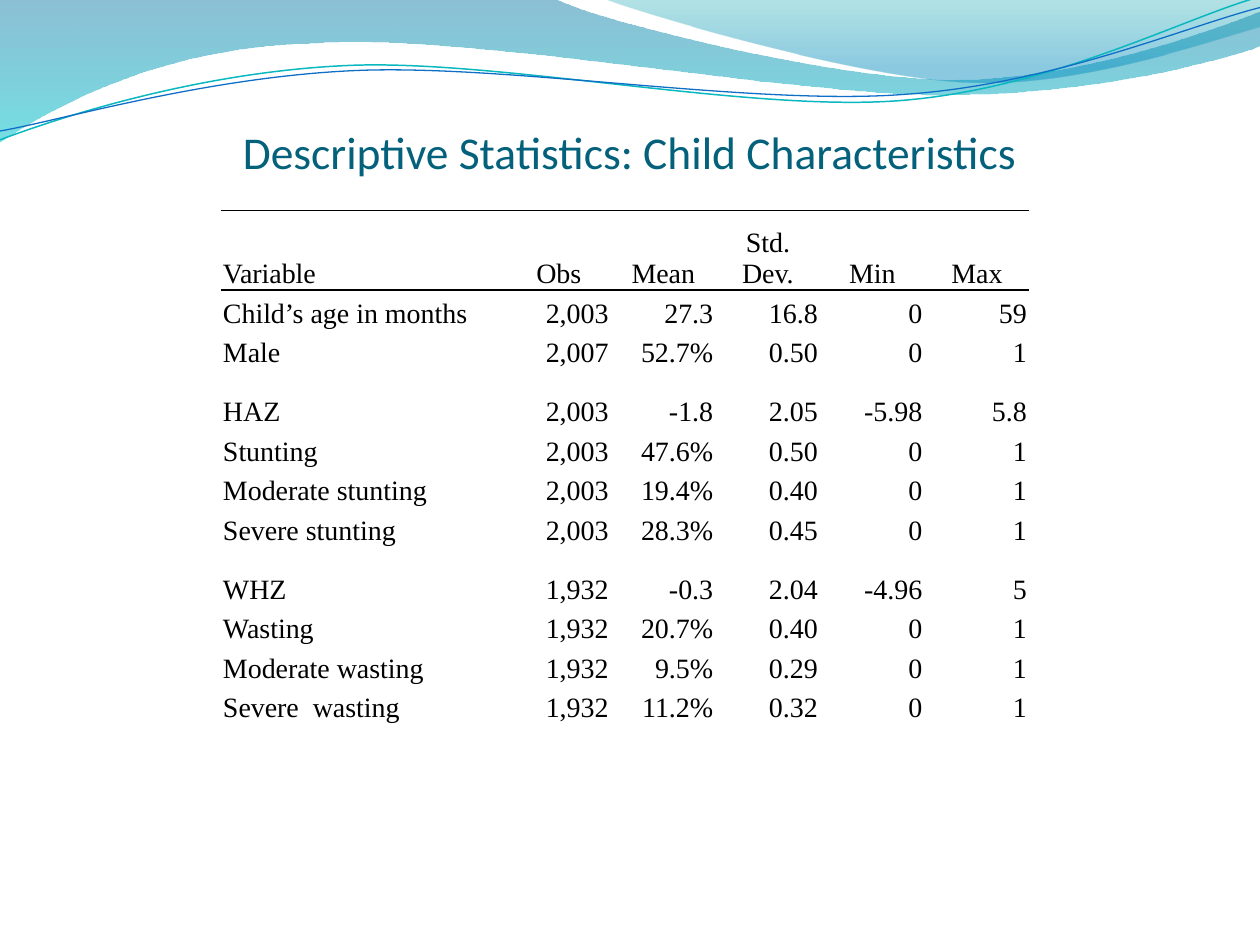
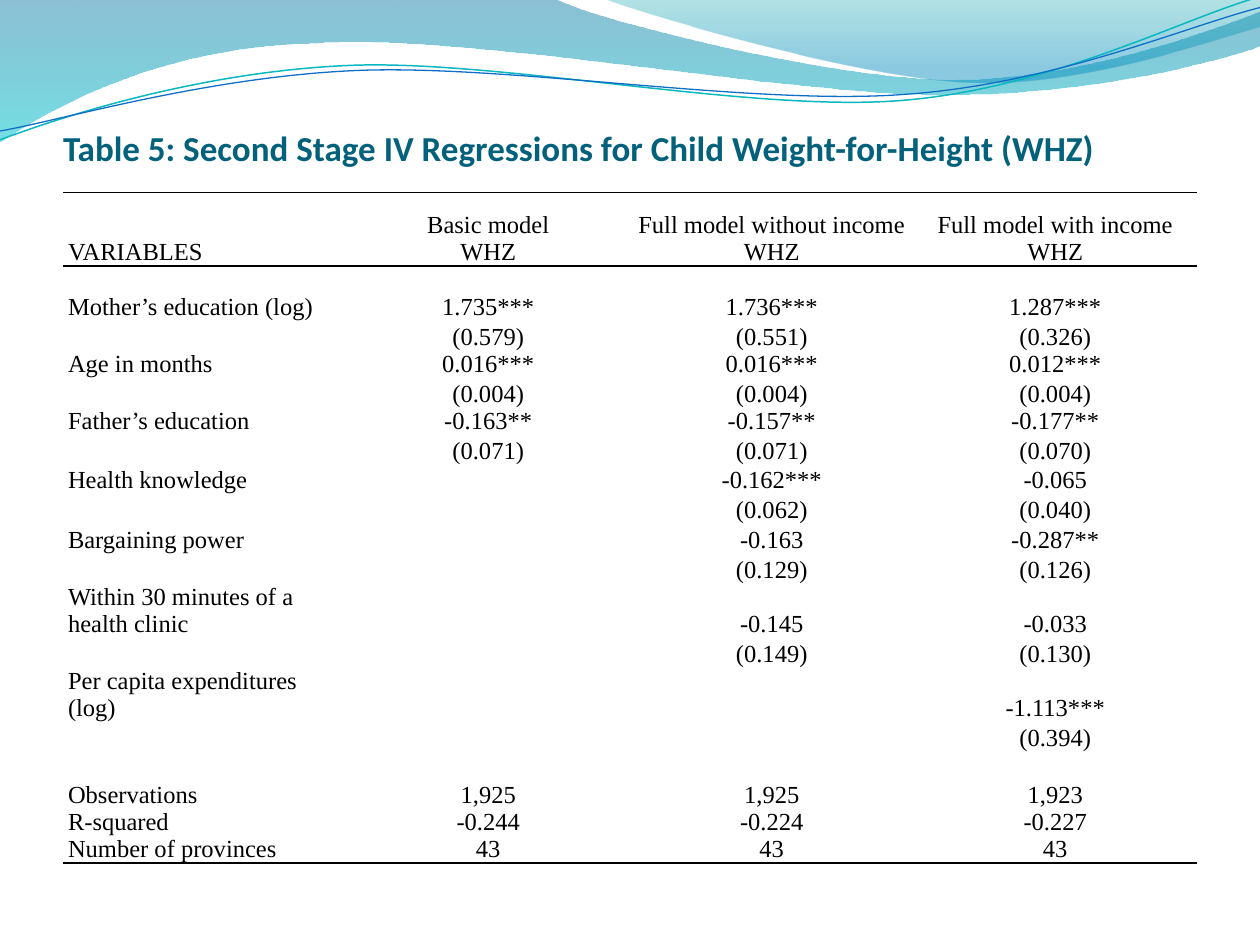
import lxml.etree
import pptx
import pptx.dml.color
import pptx.enum.text
import pptx.oxml.ns
import pptx.util

COLS, ROWS = 10, 7.5
UNIT = pptx.util.Inches(1)
INK, TEAL = "000000", "04617B"
SERIF = "Times New Roman"
PLAIN = "{2D5ABB26-0587-4C30-8999-92F81FD0307C}"
ALIGN = pptx.enum.text.PP_ALIGN
ANCHOR = pptx.enum.text.MSO_ANCHOR
qn = pptx.oxml.ns.qn
sub = lxml.etree.SubElement

# A pair is a line to a point, six numbers are a cubic curve.
BANDS = [
    {"path": [(0, 0), (4.4, -0.01), (4.76, 0.17, 6.64, 0.63, 7.58, 0.63),
              (8.53, 0.63, 9.58, 0.26, 10, 0.09), (10.01, 0.36),
              (9.83, 0.44, 8.7, 0.76, 7.46, 0.75),
              (6.22, 0.75, 3.82, 0.28, 2.57, 0.34),
              (1.29, 0.36, 0.46, 0.83, -0.01, 1.13), (0, 0)],
     "stops": [(0, "0074A1", 45), (1, "00C6CF", 55)]},
    {"path": [(4.79, -0.01), (5.09, 0.11, 6.82, 0.62, 7.69, 0.65),
              (8.56, 0.69, 9.61, 0.32, 10, 0.21), (10, 0), (4.79, -0.01)],
     "stops": [(0, "00A1A9", 30), (0.8, "008BBF", 45)]},
]
CURVES = [
    {"path": [(0, 1.11), (0.48, 0.93, 1.58, 0.57, 2.77, 0.52),
              (3.95, 0.47, 5.93, 0.89, 7.13, 0.8),
              (8.33, 0.71, 9.38, 0.15, 9.98, -0.02)],
     "line": ("0AB8BF", 0.85)},
    {"path": [(0, 1.04), (0.47, 0.96, 1.64, 0.61, 2.83, 0.56),
              (4.03, 0.51, 5.97, 0.84, 7.17, 0.75),
              (8.36, 0.67, 9.41, 0.21, 10, 0.06)],
     "line": ("0F6FC6", 0.75)},
]

CHILD = {
    "at": (1.75, 1.67), "high": 4.08, "cols": [2.27] + [0.83] * 5,
    "size": 16, "pad": 0.02, "step": (4.08 - 0.63 - 2 * 0.47) / 8,
    "tall": {0: 0.63, 3: 0.47, 7: 0.47}, "rules": {0, 1},
    "side": ALIGN.RIGHT,
    "rows": [
        ("Variable", "Obs", "Mean", "Std. Dev.", "Min", "Max"),
        ("Child’s age in months", "2,003", "27.3", "16.8", "0", "59"),
        ("Male", "2,007", "52.7%", "0.50", "0", "1"),
        ("HAZ", "2,003", "-1.8", "2.05", "-5.98", "5.8"),
        ("Stunting", "2,003", "47.6%", "0.50", "0", "1"),
        ("Moderate stunting", "2,003", "19.4%", "0.40", "0", "1"),
        ("Severe stunting", "2,003", "28.3%", "0.45", "0", "1"),
        ("WHZ", "1,932", "-0.3", "2.04", "-4.96", "5"),
        ("Wasting", "1,932", "20.7%", "0.40", "0", "1"),
        ("Moderate wasting", "1,932", "9.5%", "0.29", "0", "1"),
        ("Severe  wasting", "1,932", "11.2%", "0.32", "0", "1"),
    ],
}
MODEL = {
    "at": (0.5, 1.29), "high": 5.74, "cols": [2.25] * 4,
    "size": 14, "pad": 0.04, "step": 0.17,
    "tall": {1: 0.37, 3: 0.17, 14: 0.34, 16: 0.34},
    "rules": {1, 3, 22}, "side": ALIGN.CENTER,
    "rows": [
        ("", "", "", ""),
        ("", "Basic model", "Full model without income", "Full model with income"),
        ("VARIABLES", "WHZ", "WHZ", "WHZ"),
        ("", "", "", ""),
        ("Mother’s education (log)", "1.735***", "1.736***", "1.287***"),
        ("", "(0.579)", "(0.551)", "(0.326)"),
        ("Age in months", "0.016***", "0.016***", "0.012***"),
        ("", "(0.004)", "(0.004)", "(0.004)"),
        ("Father’s education", "-0.163**", "-0.157**", "-0.177**"),
        ("", "(0.071)", "(0.071)", "(0.070)"),
        ("Health knowledge", "", "-0.162***", "-0.065"),
        ("", "", "(0.062)", "(0.040)"),
        ("Bargaining power", "", "-0.163", "-0.287**"),
        ("", "", "(0.129)", "(0.126)"),
        ("Within 30 minutes of a health clinic", "", "-0.145", "-0.033"),
        ("", "", "(0.149)", "(0.130)"),
        ("Per capita expenditures (log)", "", "", "-1.113***"),
        ("", "", "", "(0.394)"),
        ("", "", "", ""),
        ("Observations", "1,925", "1,925", "1,923"),
        ("R-squared", "-0.244", "-0.224", "-0.227"),
        ("Number of provinces", "43", "43", "43"),
    ],
}
BLANK = 0.19  # height of a row that has an empty cell


def span(count):
    """Length of a number of grid units."""
    return round(count * UNIT)


def tint(code):
    return pptx.dml.color.RGBColor.from_string(code)


def apply(item, values):
    for name, value in values.items():
        setattr(item, name, value)


def style(font, face, size, code, bold=False):
    apply(font, {"name": face, "size": pptx.util.Pt(size), "bold": bold})
    font.color.rgb = tint(code)


def outline(slide, path):
    """Join the end points by lines, then bend those that are curves."""
    ends = [(span(part[-2]), span(part[-1])) for part in path]
    pen = slide.shapes.build_freeform(*ends[0])
    pen.add_line_segments(ends[1:], close=path[0] == path[-1])
    shape = pen.convert_to_shape()
    shape.shadow.inherit = False
    lines = list(shape.element.iter(qn("a:lnTo")))
    for line, part in zip(lines, path[1:]):
        if len(part) == 6:
            bend = lxml.etree.Element(qn("a:cubicBezTo"))
            for x, y in zip(part[::2], part[1::2]):
                sub(bend, qn("a:pt"), x=str(span(x) - shape.left),
                    y=str(span(y) - shape.top))
            line.getparent().replace(line, bend)
    return shape


def band(slide, path, stops):
    shape = outline(slide, path)
    shape.line.fill.background()
    shape.fill.gradient()
    shape.fill.gradient_angle = 270
    for stop, (place, code, _) in zip(shape.fill.gradient_stops, stops):
        stop.position = place
        stop.color.rgb = tint(code)
    for node, stop in zip(shape.element.iter(qn("a:srgbClr")), stops):
        sub(node, qn("a:alpha"), val=str(stop[2] * 1000))
    return shape


def curve(slide, path, line):
    shape = outline(slide, path)
    shape.fill.background()
    shape.line.color.rgb = tint(line[0])
    shape.line.width = pptx.util.Pt(line[1])
    return shape


def share(layout, shapes):
    """Move shapes to the back of the layout."""
    for place, shape in enumerate(shapes, 2):
        layout.shapes.element.insert(place, shape.element)


def head(slide, text, top, high, size, align, bold=False):
    title = slide.shapes.title
    apply(title, {"left": span(0.5), "top": span(top),
                  "width": span(COLS - 1), "height": span(high)})
    frame = title.text_frame
    frame.text = text
    apply(frame, {"margin_left": 0, "margin_right": 0, "margin_bottom": 0,
                  "margin_top": span(0.05), "word_wrap": True,
                  "vertical_anchor": ANCHOR.BOTTOM,
                  "auto_size": pptx.enum.text.MSO_AUTO_SIZE.NONE})
    para = frame.paragraphs[0]
    para.alignment = align
    style(para.runs[0].font, "Calibri", size, TEAL, bold)


def frame(cell, top, base):
    """Rule the top or base of a cell and clear its other sides."""
    props = cell._tc.get_or_add_tcPr()
    sides = {"lnL": False, "lnR": False, "lnT": top, "lnB": base}
    for place, (side, drawn) in enumerate(sides.items()):
        line = lxml.etree.Element(qn("a:" + side))
        if drawn:
            line.set("w", str(pptx.util.Pt(1)))
            sub(sub(line, qn("a:solidFill")), qn("a:srgbClr"), val=INK)
        else:
            sub(line, qn("a:noFill"))
        props.insert(place, line)


def fill(cell, text, size, pad, align, serif):
    cell.fill.background()
    apply(cell, {"margin_left": span(pad), "margin_right": span(pad),
                 "margin_top": 0, "margin_bottom": 0,
                 "vertical_anchor": ANCHOR.BOTTOM})
    para = cell.text_frame.paragraphs[0]
    para.alignment = align
    if text:
        run = para.add_run()
        run.text = text
        style(run.font, SERIF, size, INK)
    else:
        end = sub(para._p, qn("a:endParaRPr"), sz=str(size * 100))
        if serif:
            sub(end, qn("a:latin"), typeface=SERIF)


def grid(slide, at, high, cols, rows, size, pad, step, tall, rules, side):
    highs = [tall.get(r, step if all(row) else BLANK)
             for r, row in enumerate(rows)]
    box = (span(n) for n in (*at, sum(cols), high))
    holder = slide.shapes.add_table(len(rows), len(cols), *box)
    table = holder.table
    apply(table, {"first_row": False, "horz_banding": False})
    for node in table._tbl.iter(qn("a:tableStyleId")):
        node.text = PLAIN
    for col, wide in zip(table.columns, cols):
        col.width = span(wide)
    first = next(r for r, row in enumerate(rows) if row[0])
    for r, row in enumerate(rows):
        table.rows[r].height = span(highs[r])
        for c, text in enumerate(row):
            cell = table.cell(r, c)
            align = ALIGN.LEFT if c == 0 else side if r > first else ALIGN.CENTER
            fill(cell, text, size, pad, align, r in tall)
            frame(cell, r in rules, r + 1 in rules)
    holder.height = span(high)


def main():
    deck = pptx.Presentation()
    apply(deck, {"slide_width": span(COLS), "slide_height": span(ROWS)})
    layout = deck.slide_layouts[5]

    slide = deck.slides.add_slide(layout)
    share(layout, [band(slide, **wave) for wave in BANDS]
          + [curve(slide, **wave) for wave in CURVES])
    head(slide, "Descriptive Statistics: Child Characteristics",
         1, 0.42, 26, ALIGN.CENTER)
    grid(slide, **CHILD)

    slide = deck.slides.add_slide(layout)
    head(slide, "Table 5: Second Stage IV Regressions for Child "
         "Weight-for-Height (WHZ)", 0.42, 0.92, 20, ALIGN.LEFT, True)
    grid(slide, **MODEL)

    deck.save("out.pptx")


if __name__ == "__main__":
    main()
